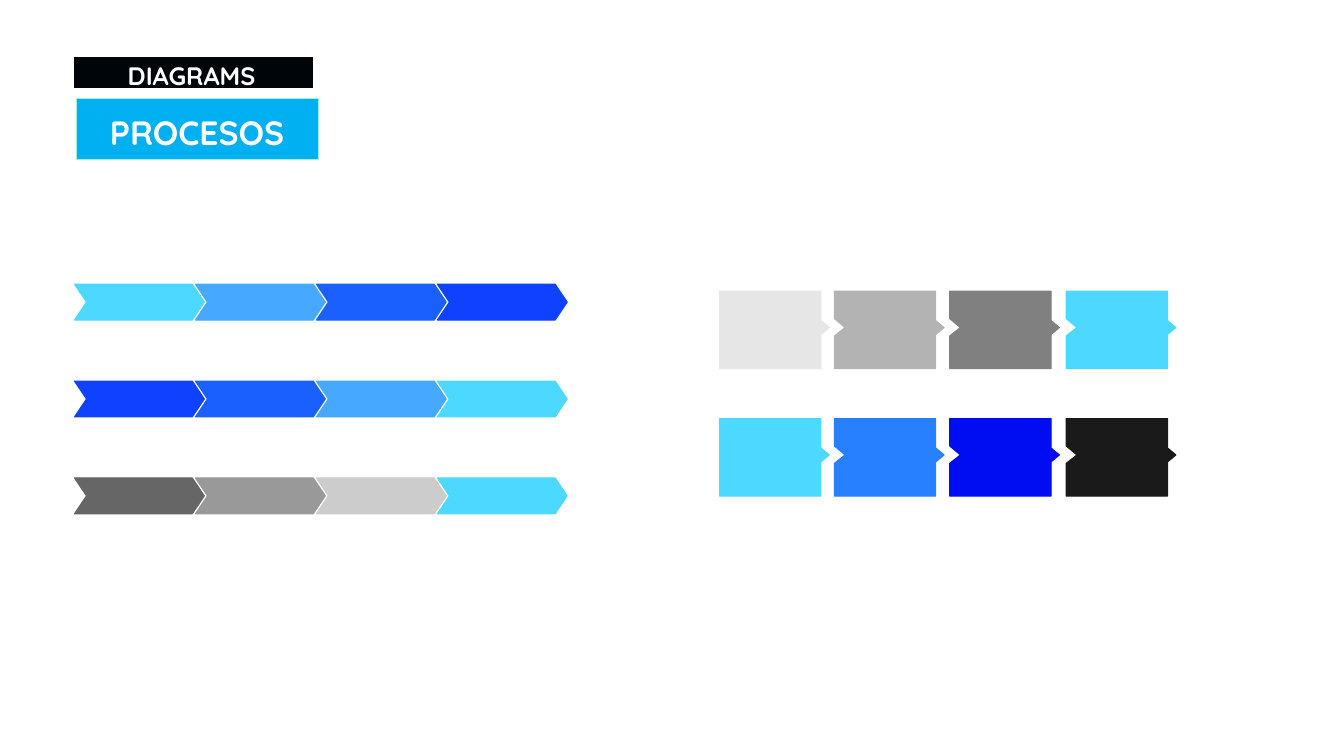
from dataclasses import dataclass

from pptx import Presentation
from pptx.dml.color import RGBColor
from pptx.enum.shapes import MSO_SHAPE as Geo
from pptx.enum.text import MSO_ANCHOR as Anchor, MSO_AUTO_SIZE as Fit, PP_ALIGN as Align
from pptx.util import Pt


@dataclass
class Row:
    top: float
    hues: list[str]


CHAIN = [
    Row(203, ["4DD9FF", "46A8FF", "1A60FF", "0F42FF"]),
    Row(272.2, ["0F42FF", "1A60FF", "46A8FF", "4DD9FF"]),
    Row(341.4, ["666666", "999999", "CCCCCC", "4DD9FF"]),
]
STEPS = [
    Row(208, ["E6E6E6", "B3B3B3", "808080", "4DD9FF"]),
    Row(299, ["4DD9FF", "2680FF", "000DF2", "1A1A1A"]),
]
LEFTS = [514, 596, 678.4, 761.6]
ARROW = [(0, 0), (84.2, 0), (92.8, 12.8), (84.2, 25.6), (0, 25.6), (8.6, 12.8)]
BLOCK = [(0, 0), (72.4, 0), (72.4, 21), (78.4, 26), (72.4, 31), (72.4, 55.4), (0, 55.4)]
NOTCH = [(0, 32), (7.6, 26), (0, 19.6)]


def paint(shape, fill: str, edge: str) -> None:
    shape.shadow.inherit = False
    shape.fill.solid()
    shape.fill.fore_color.rgb = RGBColor.from_string(fill)
    shape.line.color.rgb = RGBColor.from_string(edge)
    shape.line.width = Pt(0)


def panel(shapes, left: float, top: float, width: float, high: float, fill: str, edge: str) -> None:
    paint(shapes.add_shape(Geo.RECTANGLE, Pt(left), Pt(top), Pt(width), Pt(high)), fill, edge)


def trace(shapes, left: float, top: float, dots: list[tuple[float, float]], hue: str) -> None:
    spots = [(Pt(left + x), Pt(top + y)) for x, y in dots]
    pen = shapes.build_freeform(*spots[0])
    pen.add_line_segments(spots[1:], close=True)
    paint(pen.convert_to_shape(), hue, hue)


def write(shape, text: str, *, size: float, wrap: bool = True,
          font: str = "Quicksand", hue: str = "FFFFFF") -> None:
    frame = shape.text_frame
    frame.text = text
    frame.word_wrap = wrap
    frame.auto_size = Fit.SHAPE_TO_FIT_TEXT
    frame.vertical_anchor = Anchor.TOP
    para = frame.paragraphs[0]
    para.alignment = Align.LEFT
    face = para.runs[0].font
    face.name, face.size, face.bold = font, Pt(size), True
    face.color.rgb = RGBColor.from_string(hue)


def main() -> None:
    deck = Presentation()
    deck.slide_width, deck.slide_height = Pt(960), Pt(540)
    slide = deck.slides.add_slide(deck.slide_layouts[5])
    shapes = slide.shapes

    panel(shapes, 54.8, 70.6, 172.8, 43.2, "00B0F0", "9FF2DD")
    panel(shapes, 53.2, 41, 170, 21.8, "000509", "000509")
    label = shapes.add_textbox(Pt(84.2), Pt(39.6), Pt(126.7), Pt(29))
    write(label, "DIAGRAMS", size=18)

    title = shapes.title
    title.left, title.top, title.width, title.height = Pt(71.3), Pt(76.3), Pt(139.7), Pt(36.3)
    write(title, "PROCESOS", size=24, wrap=False)
    shapes.element.append(title.element)

    for row in CHAIN:
        for i, hue in enumerate(row.hues):
            trace(shapes, 53.2 + i * 86.4, row.top, ARROW, hue)
    for row in STEPS:
        for i, (left, hue) in enumerate(zip(LEFTS, row.hues)):
            trace(shapes, left, row.top, BLOCK + NOTCH if i else BLOCK, hue)

    deck.save("out.pptx")


if __name__ == "__main__":
    main()
